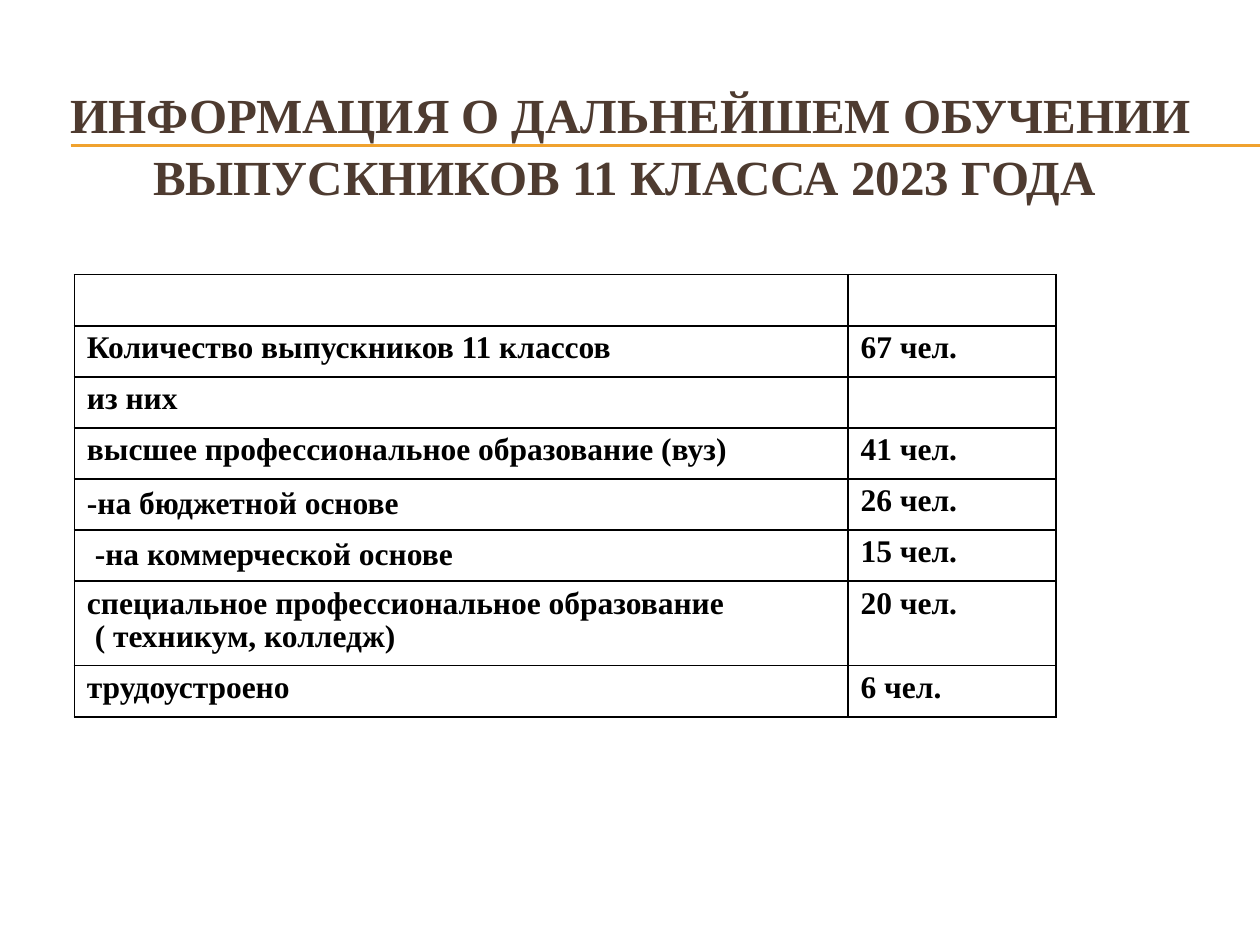
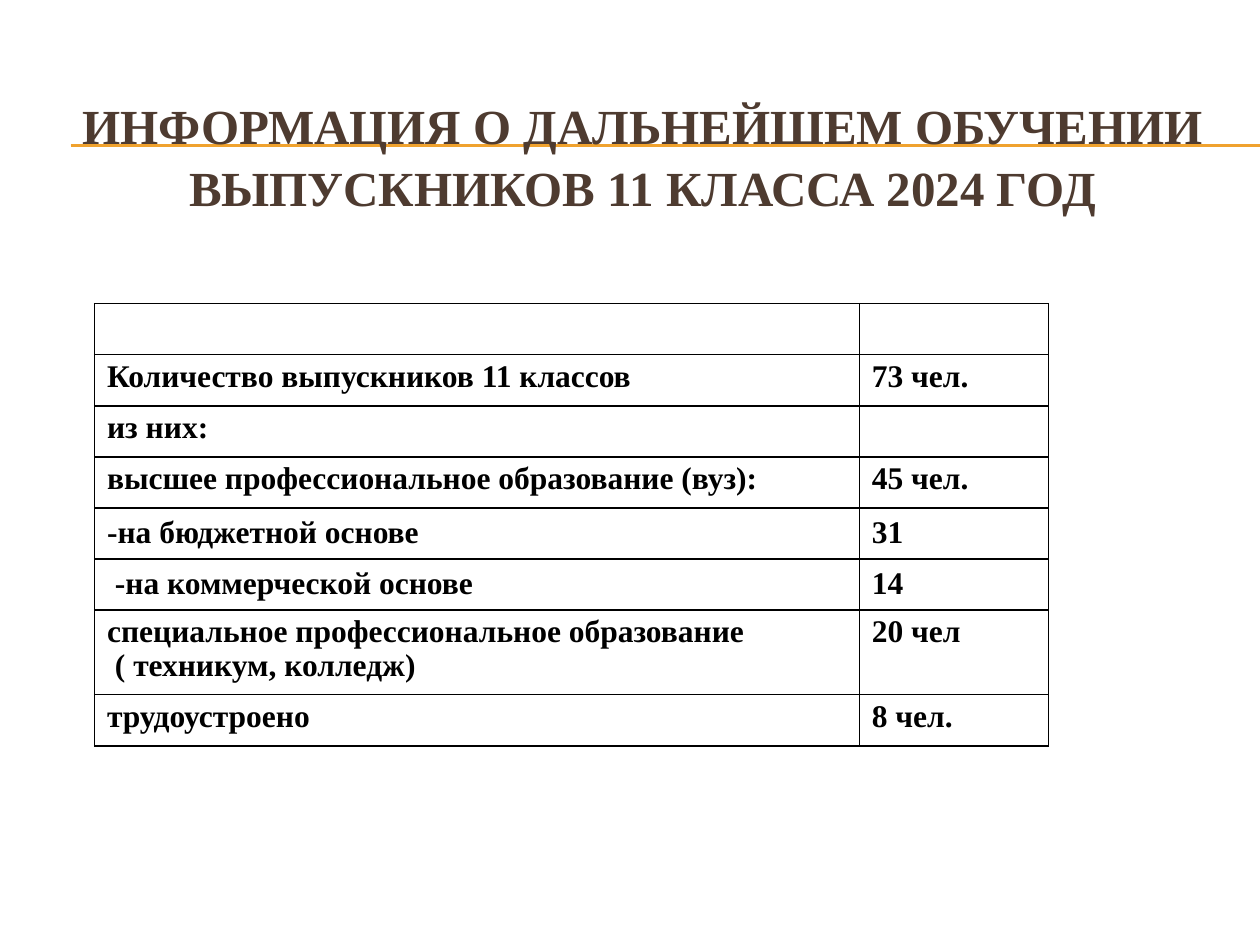
from dataclasses import dataclass

from lxml import etree
from pptx import Presentation
from pptx.dml.color import RGBColor
from pptx.enum.shapes import MSO_CONNECTOR
from pptx.enum.text import MSO_ANCHOR, PP_ALIGN
from pptx.oxml.ns import qn
from pptx.util import Inches, Pt

STRAIGHT = MSO_CONNECTOR.STRAIGHT
TOP, MIDDLE = MSO_ANCHOR.TOP, MSO_ANCHOR.MIDDLE
LEFT, CENTER = PP_ALIGN.LEFT, PP_ALIGN.CENTER

# Shared style
GOLD, BROWN, BLACK = "F0A22E", "4E3B30", "000000"
TITLE_FONT = {"name": "Times New Roman", "size": Pt(28), "bold": True}
CELL_FONT = {"name": "Times New Roman", "size": Pt(18), "bold": True}
RULE_LEFT, RULE_RIGHT, RULE_TOPS = 0.56, 10, (1.15, 1.16)
TABLE_HEIGHT, TALL_ROW = 3.49, 0.65


@dataclass
class GraduateSlide:
    title: str
    title_box: tuple[float, float, float, float]
    table_at: tuple[float, float]
    columns: tuple[float, float]
    mark: str  # closes the labels that introduce a breakdown
    values: tuple[str, ...]
    basis_anchor: MSO_ANCHOR  # anchor of the values in the "-на ..." rows


SLIDES = [
    GraduateSlide(
        "ИНФОРМАЦИЯ О ДАЛЬНЕЙШЕМ ОБУЧЕНИИ ВЫПУСКНИКОВ 11 КЛАССА 2023 ГОДА ",
        (0.2, 0.68, 9.61, 0.92), (0.59, 2.18), (6.14, 1.65), "",
        ("", "67 чел.", "", "41 чел.", "26 чел.", "15 чел.", "20 чел.", "6 чел."), TOP),
    GraduateSlide(
        "ИНФОРМАЦИЯ О ДАЛЬНЕЙШЕМ ОБУЧЕНИИ ВЫПУСКНИКОВ 11 КЛАССА 2024 ГОД",
        (0.2, 0.6, 9.8, 1.25), (0.75, 2.41), (6.07, 1.5), ":",
        ("", "73 чел.", "", "45 чел.", "31", "14", "20 чел", "8 чел."), MIDDLE),
]


def row_labels(mark: str) -> list[str]:
    return [
        "",
        "Количество выпускников 11 классов",
        f"из них{mark}",
        f"высшее профессиональное образование (вуз){mark}",
        "-на бюджетной основе",
        " -на коммерческой основе",
        "специальное профессиональное образование\n ( техникум, колледж)",
        "трудоустроено",
    ]


def rgb(color: str) -> RGBColor:
    return RGBColor.from_string(color)


def write_text(tf, text: str, font: dict, color: str, align: PP_ALIGN, spacing: float) -> None:
    tf.text = text
    for p in tf.paragraphs:
        p.alignment, p.line_spacing = align, spacing
        for target in (p, *p.runs):
            for name, value in font.items():
                setattr(target.font, name, value)
            target.font.color.rgb = rgb(color)


def add_rules(s) -> None:
    for y in RULE_TOPS:
        line = s.shapes.add_connector(STRAIGHT, Inches(RULE_LEFT), Inches(y),
                                      Inches(RULE_RIGHT), Inches(y))
        line.line.color.rgb, line.line.width = rgb(GOLD), Pt(0.75)
        etree.SubElement(line._element.spPr, qn("a:effectLst"))


def add_title(s, text: str, box: tuple[float, float, float, float]) -> None:
    tf = s.shapes.add_textbox(*map(Inches, box)).text_frame
    tf.word_wrap, tf.vertical_anchor = True, MIDDLE
    write_text(tf, text, TITLE_FONT, BROWN, CENTER, 1.05)


def style_cell(cell) -> None:
    tc_pr = cell._tc.get_or_add_tcPr()
    for side in ("lnL", "lnR", "lnT", "lnB"):
        ln = etree.SubElement(tc_pr, qn(f"a:{side}"), w=str(Pt(1)))
        fill = etree.SubElement(ln, qn("a:solidFill"))
        etree.SubElement(fill, qn("a:srgbClr"), val=BLACK)
    cell.fill.background()


def add_graduate_table(s, data: GraduateSlide) -> None:
    labels = row_labels(data.mark)
    table = s.shapes.add_table(len(labels), len(data.columns), *map(Inches, data.table_at),
                               Inches(sum(data.columns)), Inches(TABLE_HEIGHT)).table
    table.first_row = table.horz_banding = False
    for column, width in zip(table.columns, data.columns):
        column.width = Inches(width)

    # One tall row for the two-line label, the rest share the height equally
    plain_row = (TABLE_HEIGHT - TALL_ROW) / (len(labels) - 1)
    for row, label, value in zip(table.rows, labels, data.values):
        row.height = Inches(TALL_ROW if "\n" in label else plain_row)
        is_basis = label.strip().startswith("-")
        anchors = (MIDDLE, data.basis_anchor) if is_basis else (TOP, TOP)
        for cell, text, anchor in zip(row.cells, (label, value), anchors):
            style_cell(cell)
            cell.vertical_anchor = anchor
            write_text(cell.text_frame, text, CELL_FONT, BLACK, LEFT, 0.95)


def main() -> None:
    prs = Presentation()
    prs.slide_width, prs.slide_height = Inches(10), Inches(7.5)
    for data in SLIDES:
        s = prs.slides.add_slide(prs.slide_layouts[6])
        add_rules(s)
        add_title(s, data.title, data.title_box)
        add_graduate_table(s, data)
    prs.save("out.pptx")


if __name__ == "__main__":
    main()
